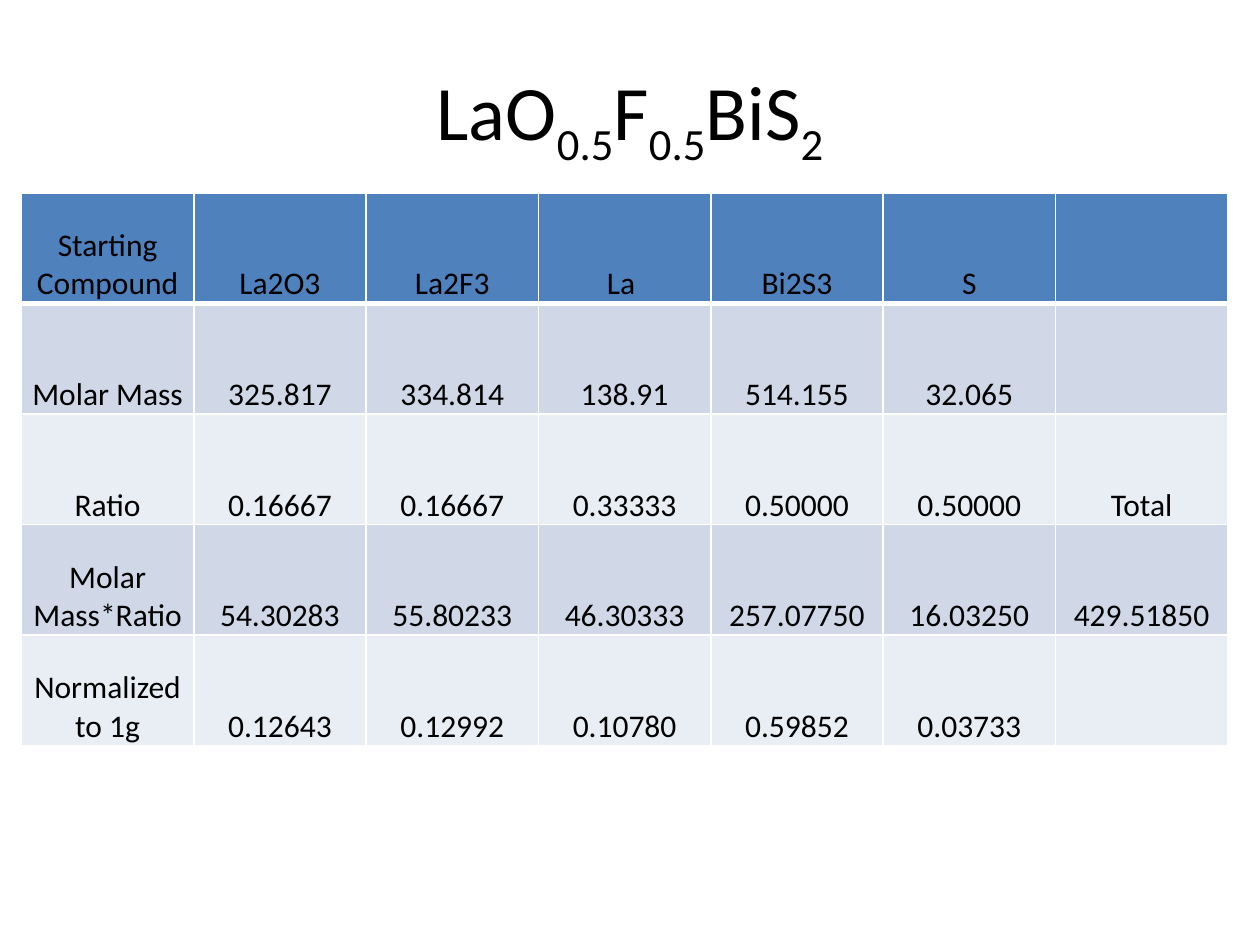
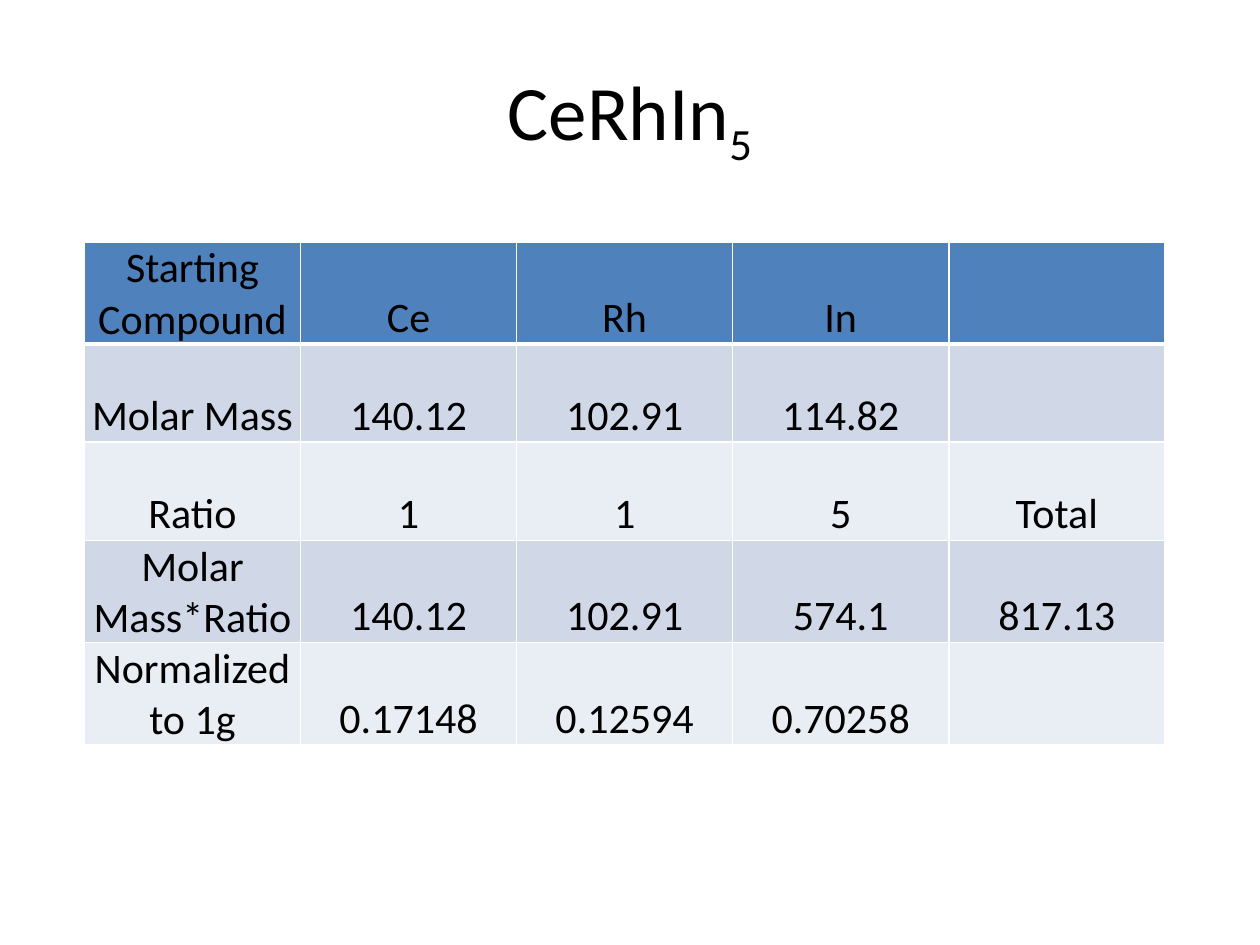
import dataclasses

import lxml.etree
import pptx
import pptx.dml.color
import pptx.enum.text
import pptx.oxml.ns
import pptx.util

Pt = pptx.util.Pt


@dataclasses.dataclass(frozen=True)
class Theme:
    font: str = "Calibri"
    title_size: int = 44
    text: str = "000000"
    header: str = "4F81BD"
    bands: tuple = ("D0D8E8", "E9EDF4")
    rule: str = "FFFFFF"
    thin_rule: int = 1
    thick_rule: int = 3
    subscript: int = -25000
    cell_inset: float = 0.7


@dataclasses.dataclass(frozen=True)
class Box:
    left: float
    top: float
    width: float
    height: float

    def lengths(self):
        return [Pt(value) for value in dataclasses.astuple(self)]


THEME = Theme()
TITLE_BOX = Box(36, 21.6, 648, 90)
ROW_LABELS = ("Starting Compound", "Molar Mass", "Ratio", "Molar Mass*Ratio", "Normalized to 1g")


def style_span(span, size):
    span.font.name = THEME.font
    span.font.size = Pt(size)
    span.font.bold = False
    span.font.color.rgb = pptx.dml.color.RGBColor.from_string(THEME.text)


def add_formula_title(page, box, formula):
    """Write a chemical formula given as (symbols, subscript) pairs."""
    frame = page.shapes.add_textbox(*box.lengths()).text_frame
    frame.word_wrap = True
    frame.vertical_anchor = pptx.enum.text.MSO_ANCHOR.MIDDLE
    para = frame.paragraphs[0]
    para.alignment = pptx.enum.text.PP_ALIGN.CENTER
    for symbols, subscript in formula:
        for text, baseline in ((symbols, 0), (subscript, THEME.subscript)):
            span = para.add_run()
            span.text = text
            style_span(span, THEME.title_size)
            if baseline:
                span.font._element.set("baseline", str(baseline))


def set_borders(cell, top, bottom):
    """Draw all four cell borders; top and bottom are widths in points."""
    properties = cell._tc.get_or_add_tcPr()
    qn = pptx.oxml.ns.qn
    widths = {"lnL": THEME.thin_rule, "lnR": THEME.thin_rule, "lnT": top, "lnB": bottom}
    for position, (side, width) in enumerate(widths.items()):
        line = lxml.etree.Element(qn(f"a:{side}"), w=str(Pt(width)))
        fill = lxml.etree.SubElement(line, qn("a:solidFill"))
        lxml.etree.SubElement(fill, qn("a:srgbClr"), val=THEME.rule)
        properties.insert(position, line)


def fill_cell(cell, text, row, size):
    color = THEME.bands[(row - 1) % 2] if row else THEME.header
    cell.fill.solid()
    cell.fill.fore_color.rgb = pptx.dml.color.RGBColor.from_string(color)
    set_borders(
        cell,
        top=THEME.thick_rule if row == 1 else THEME.thin_rule,
        bottom=THEME.thick_rule if row == 0 else THEME.thin_rule,
    )
    if not text:
        return
    cell.vertical_anchor = pptx.enum.text.MSO_ANCHOR.BOTTOM
    cell.margin_left = cell.margin_right = cell.margin_top = Pt(THEME.cell_inset)
    cell.margin_bottom = 0
    para = cell.text_frame.paragraphs[0]
    para.text = text
    para.alignment = pptx.enum.text.PP_ALIGN.CENTER
    style_span(para.runs[0], size)


def add_mass_table(page, box, compounds, total, size):
    """Add one column per compound, between the row labels and the total."""
    columns = [ROW_LABELS, *compounds, ("", "", "Total", total, "")]
    table = page.shapes.add_table(len(ROW_LABELS), len(columns), *box.lengths()).table
    for row in table.rows:
        row.height = Pt(box.height / len(ROW_LABELS))
    for column_index, values in enumerate(columns):
        table.columns[column_index].width = Pt(box.width / len(columns))
        for row_index, text in enumerate(values):
            fill_cell(table.cell(row_index, column_index), text, row_index, size)


def add_compound_page(deck, formula, table_box, compounds, total, size):
    page = deck.slides.add_slide(deck.slide_layouts[6])
    add_formula_title(page, TITLE_BOX, formula)
    add_mass_table(page, table_box, compounds, total, size)


def main():
    deck = pptx.Presentation()
    deck.slide_width, deck.slide_height = Pt(720), Pt(540)
    add_compound_page(
        deck,
        formula=[("LaO", "0.5"), ("F", "0.5"), ("BiS", "2")],
        table_box=Box(12.24, 110.16, 689.5, 316),
        compounds=[
            ("La2O3", "325.817", "0.16667", "54.30283", "0.12643"),
            ("La2F3", "334.814", "0.16667", "55.80233", "0.12992"),
            ("La ", "138.91", "0.33333", "46.30333", "0.10780"),
            ("Bi2S3", "514.155", "0.50000", "257.07750", "0.59852"),
            ("S", "32.065", "0.50000", "16.03250", "0.03733"),
        ],
        total="429.51850",
        size=18,
    )
    add_compound_page(
        deck,
        formula=[("CeRhIn", "5")],
        table_box=Box(48.24, 138.24, 617.5, 280.5),
        compounds=[
            ("Ce", "140.12", "1", "140.12", "0.17148"),
            ("Rh", "102.91", "1", "102.91", "0.12594"),
            ("In", "114.82", "5", "574.1", "0.70258"),
        ],
        total="817.13",
        size=24,
    )
    deck.save("out.pptx")


if __name__ == "__main__":
    main()
